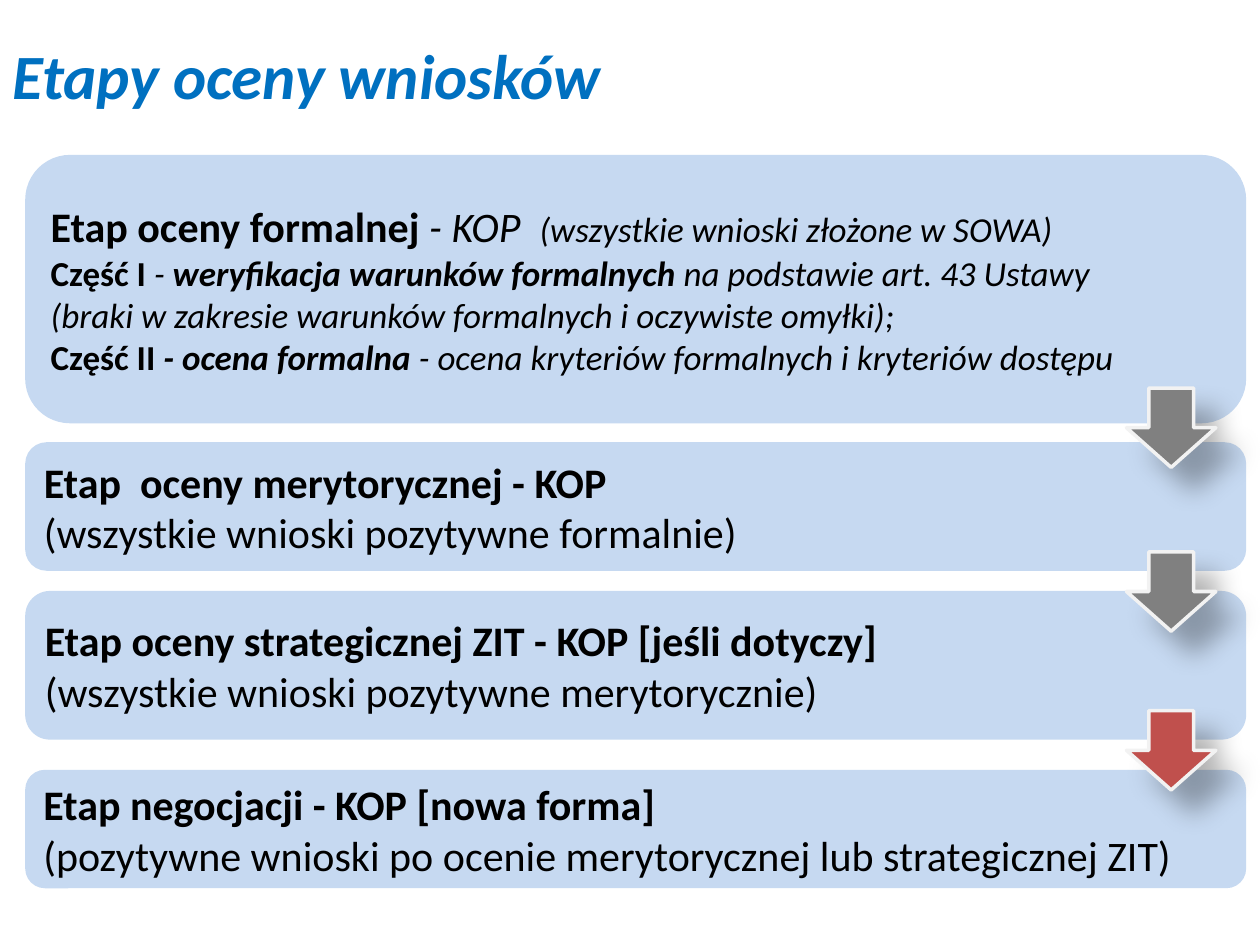
from lxml import etree
from pptx import Presentation
from pptx.dml.color import RGBColor as Rgb
from pptx.enum.shapes import MSO_SHAPE as Shape
from pptx.enum.text import MSO_ANCHOR as Anchor, PP_ALIGN as Align
from pptx.oxml.ns import qn
from pptx.util import Inches, Pt

COLORS = {"title": "0070C0", "box": "C6D9F1", "text": "000000",
          "gray": "808080", "red": "C0504D", "edge": "F2F2F2"}
LEFT, WIDTH = 0.2, 9.69

# Stages: top, height, paragraphs of (text, size, style: b bold, i italic)
STAGES = [
    (1.23, 2.13, [
        [("Etap oceny formalnej ", 24, "b"), ("- KOP  ", 24, "i"),
         ("(wszystkie wnioski złożone w SOWA)", 20, "i")],
        [("Część I ", 20, "b"), ("- ", 20, "i"),
         ("weryfikacja warunków formalnych ", 20, "bi"),
         ("na podstawie art. 43 Ustawy", 20, "i")],
        [("(braki w zakresie warunków formalnych i oczywiste omyłki);", 20, "i")],
        [("Część II ", 20, "b"), ("- ocena formalna ", 20, "bi"),
         ("- ocena kryteriów formalnych i kryteriów dostępu", 20, "i")]]),
    (3.51, 1.02, [
        [("Etap  oceny merytorycznej - KOP", 24, "b")],
        [("(wszystkie wnioski pozytywne formalnie)", 24, "")]]),
    (4.69, 1.18, [
        [("Etap oceny strategicznej ZIT - KOP [jeśli dotyczy]", 24, "b")],
        [("(wszystkie wnioski pozytywne merytorycznie)", 24, "")]]),
    (6.11, 0.94, [
        [("Etap negocjacji - KOP [nowa forma]", 24, "b")],
        [("(pozytywne wnioski po ocenie merytorycznej lub strategicznej ZIT)",
          24, "")]]),
]
ARROWS = [(3.08, "gray"), (4.38, "gray"), (5.64, "red")]


def color(name):
    return Rgb.from_string(COLORS[name])


def write(frame, paras, tint="text"):
    frame.word_wrap = True
    frame.vertical_anchor = Anchor.MIDDLE
    for n, runs in enumerate(paras):
        para = frame.add_paragraph() if n else frame.paragraphs[0]
        para.alignment = Align.LEFT
        for text, size, style in runs:
            run = para.add_run()
            run.text = text
            form = {"name": "Calibri", "size": Pt(size),
                    "bold": "b" in style, "italic": "i" in style}
            for key, value in form.items():
                setattr(run.font, key, value)
            run.font.color.rgb = color(tint)


def add_title(slide):
    box = slide.shapes.add_textbox(0, 0, Inches(9.02), Inches(1.25))
    write(box.text_frame, [[("Etapy oceny wniosków", 36, "bi")]], "title")
    box.text_frame.paragraphs[0].line_spacing = 0.9


def add_form(slide, kind, rect, fill):
    form = slide.shapes.add_shape(kind, *map(Inches, rect))
    form.shadow.inherit = False
    form.fill.solid()
    form.fill.fore_color.rgb = color(fill)
    form.line.fill.background()
    return form


def add_stage(slide, top, height, paras):
    box = add_form(slide, Shape.ROUNDED_RECTANGLE,
                   (LEFT, top, WIDTH, height), "box")
    write(box.text_frame, paras)


def add_arrow(slide, top, fill):
    arrow = add_form(slide, Shape.DOWN_ARROW, (8.94, top, 0.71, 0.63), fill)
    arrow.line.color.rgb = color("edge")
    arrow.line.width = Pt(2)
    # Soft shadow to the lower right
    effects = arrow._element.spPr.find(qn("a:effectLst"))
    shade = etree.SubElement(effects, qn("a:outerShdw"), blurRad=str(Pt(15)),
                             dist=str(Pt(18)), dir=str(45 * 60000),
                             algn="ctr", rotWithShape="0")
    tone = etree.SubElement(shade, qn("a:srgbClr"), val=COLORS["text"])
    etree.SubElement(tone, qn("a:alpha"), val="30000")


def main():
    deck = Presentation()
    deck.slide_width, deck.slide_height = Inches(10), Inches(7.5)
    slide = deck.slides.add_slide(deck.slide_layouts[6])
    add_title(slide)
    # Stage boxes, then the arrows that link them
    for stage in STAGES:
        add_stage(slide, *stage)
    for arrow in ARROWS:
        add_arrow(slide, *arrow)
    deck.save("out.pptx")


if __name__ == "__main__":
    main()
